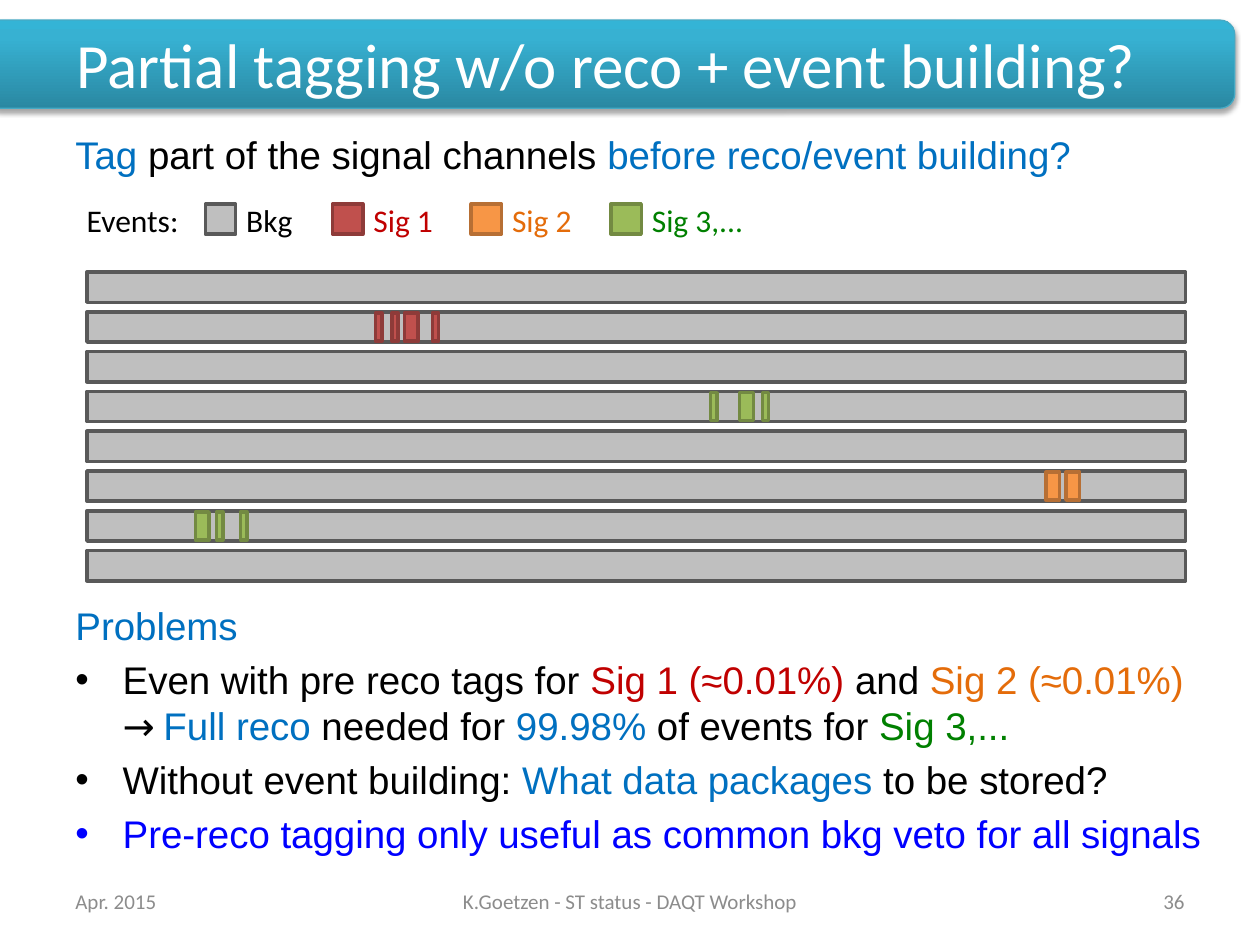
from copy import deepcopy
from dataclasses import dataclass

from lxml import etree
from pptx import Presentation
from pptx.dml.color import RGBColor
from pptx.enum.shapes import MSO_SHAPE
from pptx.enum.text import MSO_ANCHOR, PP_ALIGN
from pptx.oxml.ns import qn
from pptx.util import Pt

RECT, ROUNDED = MSO_SHAPE.RECTANGLE, MSO_SHAPE.ROUNDED_RECTANGLE
TOP, MIDDLE = MSO_ANCHOR.TOP, MSO_ANCHOR.MIDDLE
LEFT, CENTER, RIGHT = PP_ALIGN.LEFT, PP_ALIGN.CENTER, PP_ALIGN.RIGHT


@dataclass(frozen=True)
class Theme:
    heading_font: str = "Calibri"
    body_font: str = "Arial"
    arrow_font: str = "Cabin"
    title_size: float = 36
    body_size: float = 22
    legend_size: float = 18
    footer_size: float = 12
    white: str = "FFFFFF"
    black: str = "000000"
    accent: str = "0070C0"
    conclusion: str = "0000FF"
    sig1: str = "C00000"
    sig2: str = "E46C0A"
    sig3: str = "008000"
    footer: str = "8C8C8C"
    banner_line: str = "46AAC5"
    banner_stops: tuple = ((0, "2A88A2"), (0.8, "37B1D2"), (1, "34B4D6"))
    # Fill and outline of each kind of event
    bkg_event: tuple = ("BFBFBF", "595959")
    sig1_event: tuple = ("C0504D", "8E3B39")
    sig2_event: tuple = ("F79646", "B76F34")
    sig3_event: tuple = ("9BBB59", "738A42")


THEME = Theme()

# Event stream geometry, in points
STREAM_LEFT, STREAM_TOP, STREAM_WIDTH = 49.7, 155.5, 627.8
STREAM_COUNT, STREAM_PITCH, EVENT_SIZE = 8, 22.73, 17.3
TAG_INSET, WIDE, NARROW = 0.7, 7.9, 3.6
LEGEND_TOP, LABEL_TOP, LABEL_HEIGHT, LABEL_GAP = 116.6, 111.6, 28.8, 16.2
BULLET_INDENT = 27

LEGEND = [
    (117.4, 41, "Bkg", THEME.black, THEME.bkg_event),
    (190.1, 49, "Sig 1", THEME.sig1, THEME.sig1_event),
    (269.3, 49, "Sig 2", THEME.sig2, THEME.sig2_event),
    (349.2, 67, "Sig 3,...", THEME.sig3, THEME.sig3_event),
]

# Stream row, event colours, (left, width) of each tagged package
TAGS = [
    (1, THEME.sig1_event,
     [(231.1, WIDE), (223.9, NARROW), (214.6, NARROW), (247, NARROW)]),
    (3, THEME.sig3_event, [(422.6, WIDE), (435.6, NARROW), (406.1, NARROW)]),
    (6, THEME.sig3_event, [(111.6, WIDE), (137.5, NARROW), (123.8, NARROW)]),
    (5, THEME.sig2_event, [(597.6, WIDE), (609.1, WIDE)]),
]

LINE_BREAK = ("\n", None)
# Space before, bulleted, (text, colour) pieces
BODY = [
    (4.4, False, [("Tag", THEME.accent),
                  (" part of the signal channels ", THEME.black),
                  ("before reco/event building?", THEME.accent)]),
    (243, False, [("Problems", THEME.accent)]),
    (4.4, True, [("Even with pre reco tags for ", THEME.black),
                 ("Sig 1 (≈0.01%) ", THEME.sig1),
                 ("and ", THEME.black),
                 ("Sig 2 (≈0.01%)", THEME.sig2),
                 LINE_BREAK,
                 ("→ ", THEME.black),
                 ("Full reco ", THEME.accent),
                 ("needed for ", THEME.black),
                 ("99.98%", THEME.accent),
                 (" of events for ", THEME.black),
                 ("Sig 3,...", THEME.sig3)]),
    (4.4, True, [("Without event building: ", THEME.black),
                 ("What data packages ", THEME.accent),
                 ("to be stored?", THEME.black)]),
    (4.4, True, [("Pre-reco tagging only useful as common bkg veto "
                  "for all signals", THEME.conclusion)]),
]

FOOTER = [
    (36, 168, "Apr. 2015", LEFT),
    (246, 228, "K.Goetzen - ST status - DAQT Workshop", CENTER),
    (516, 168, "36", RIGHT),
]


def style_run(run, font, size, color):
    run.font.name = font
    run.font.size = Pt(size)
    run.font.color.rgb = RGBColor.from_string(color)


def add_frame(slide, left, top, width, height, anchor=TOP, wrap=True):
    """Add a text box and return its text frame."""
    box = slide.shapes.add_textbox(Pt(left), Pt(top), Pt(width), Pt(height))
    frame = box.text_frame
    frame.word_wrap = wrap
    frame.vertical_anchor = anchor
    return frame


def add_label(frame, text, size, color, align=LEFT):
    frame.text = text
    paragraph = frame.paragraphs[0]
    paragraph.alignment = align
    style_run(paragraph.runs[0], THEME.heading_font, size, color)


def add_event(slide, left, top, width, height, colors):
    event = slide.shapes.add_shape(RECT, Pt(left), Pt(top), Pt(width), Pt(height))
    event.shadow.inherit = False
    fill, outline = colors
    event.fill.solid()
    event.fill.fore_color.rgb = RGBColor.from_string(fill)
    event.line.color.rgb = RGBColor.from_string(outline)
    event.line.width = Pt(2)


def add_banner(slide):
    banner = slide.shapes.add_shape(ROUNDED, Pt(-8.6), Pt(11.5), Pt(714.2), Pt(50.4))
    banner.line.color.rgb = RGBColor.from_string(THEME.banner_line)
    banner.line.width = Pt(0.75)
    banner.fill.gradient()
    banner.fill.gradient_angle = 90
    properties = banner.element.spPr
    stop_list = properties.find(f".//{qn('a:gsLst')}")
    stop_list.append(deepcopy(stop_list[-1]))
    for stop, (position, color) in zip(banner.fill.gradient_stops, THEME.banner_stops):
        stop.position = position
        stop.color.rgb = RGBColor.from_string(color)

    banner.shadow.inherit = False
    effects = properties.find(qn("a:effectLst"))
    shadow = etree.SubElement(effects, qn("a:outerShdw"), blurRad=str(Pt(3.1)),
                              dist=str(Pt(1.8)), dir="5400000", rotWithShape="0")
    color = etree.SubElement(shadow, qn("a:srgbClr"), val=THEME.black)
    etree.SubElement(color, qn("a:alpha"), val="35000")


def add_bullet(paragraph):
    properties = paragraph._p.get_or_add_pPr()
    properties.set("marL", str(Pt(BULLET_INDENT)))
    properties.set("indent", str(-Pt(BULLET_INDENT)))
    etree.SubElement(properties, qn("a:buFont"), typeface=THEME.body_font)
    etree.SubElement(properties, qn("a:buChar"), char="•")


def add_body(slide):
    frame = add_frame(slide, 36, 71.3, 663.8, 447.8)
    for index, (space, bulleted, pieces) in enumerate(BODY):
        paragraph = frame.add_paragraph() if index else frame.paragraphs[0]
        paragraph.space_before = Pt(space)
        if bulleted:
            add_bullet(paragraph)
        for piece in pieces:
            if piece == LINE_BREAK:
                paragraph.add_line_break()
                continue
            text, color = piece
            run = paragraph.add_run()
            run.text = text
            font = THEME.arrow_font if text.startswith("→") else THEME.body_font
            style_run(run, font, THEME.body_size, color)


def add_legend(slide):
    heading = add_frame(slide, 42.5, LABEL_TOP, 67.7, LABEL_HEIGHT, wrap=False)
    add_label(heading, "Events:", THEME.legend_size, THEME.black)
    for left, width, text, color, event_colors in LEGEND:
        add_event(slide, left, LEGEND_TOP, EVENT_SIZE, EVENT_SIZE, event_colors)
        frame = add_frame(slide, left + LABEL_GAP, LABEL_TOP, width, LABEL_HEIGHT,
                          wrap=False)
        add_label(frame, text, THEME.legend_size, color)


def add_streams(slide):
    """Draw the background streams, then the tagged packages on them."""
    tops = [STREAM_TOP + row * STREAM_PITCH for row in range(STREAM_COUNT)]
    for top in tops:
        add_event(slide, STREAM_LEFT, top, STREAM_WIDTH, EVENT_SIZE, THEME.bkg_event)
    for row, colors, packages in TAGS:
        for left, width in packages:
            add_event(slide, left, tops[row] + TAG_INSET, width,
                      EVENT_SIZE - 2 * TAG_INSET, colors)


def main():
    deck = Presentation()
    deck.slide_width, deck.slide_height = Pt(720), Pt(540)
    slide = deck.slides.add_slide(deck.slide_layouts[6])
    add_banner(slide)
    title = add_frame(slide, 36.7, 16.6, 647.3, 38.9, MIDDLE)
    add_label(title, "Partial tagging w/o reco + event building?",
              THEME.title_size, THEME.white)
    add_body(slide)
    add_legend(slide)
    add_streams(slide)
    for left, width, text, align in FOOTER:
        frame = add_frame(slide, left, 500.4, width, 28.8, MIDDLE)
        add_label(frame, text, THEME.footer_size, THEME.footer, align)
    deck.save("out.pptx")


if __name__ == "__main__":
    main()
